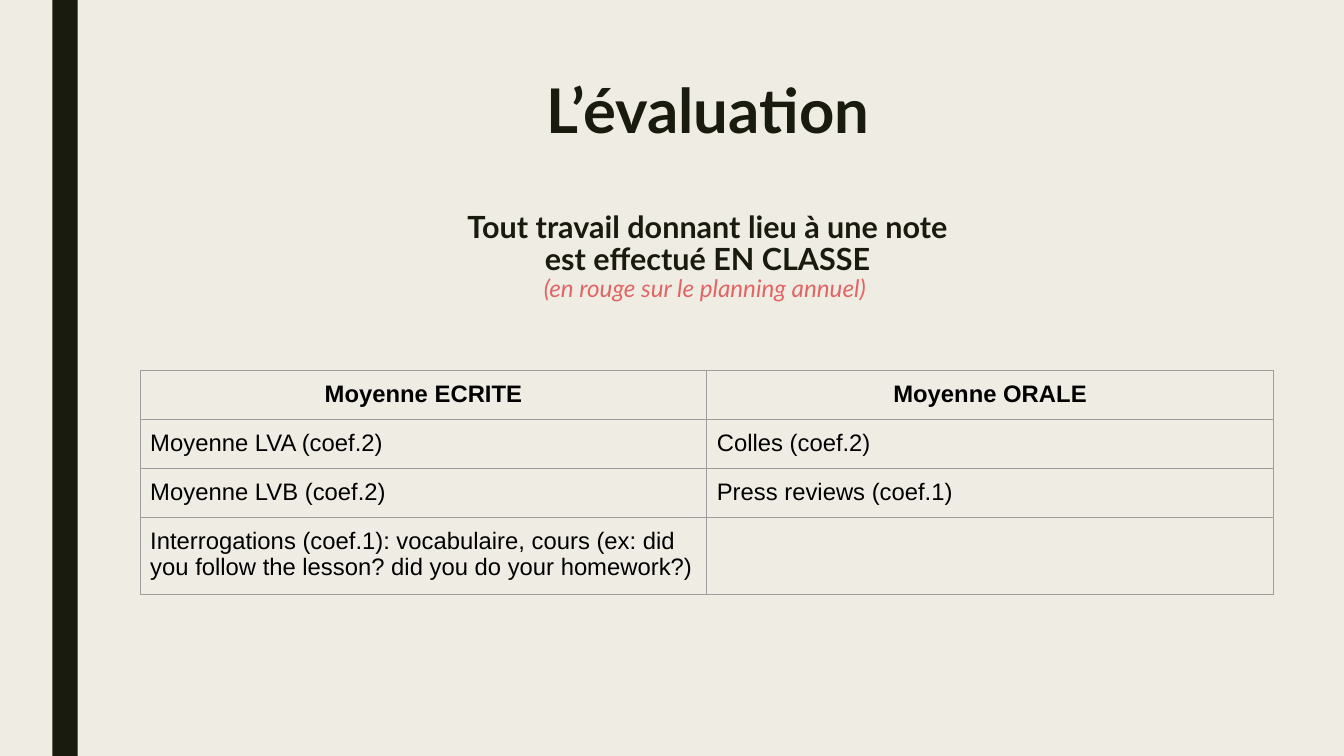
from lxml import etree
from pptx import Presentation
from pptx.dml.color import RGBColor
from pptx.enum.shapes import MSO_SHAPE
from pptx.enum.text import MSO_ANCHOR, PP_ALIGN
from pptx.oxml.ns import qn
from pptx.util import Inches, Pt

RECTANGLE = MSO_SHAPE.RECTANGLE
TOP = MSO_ANCHOR.TOP
LEFT, CENTER = PP_ALIGN.LEFT, PP_ALIGN.CENTER
COLORS = {"paper": "EFEDE3", "ink": "191B0E", "red": "E06666",
          "black": "000000", "grid": "9E9E9E"}


class EvaluationSlide:
    """Hold the style and the current page, with one method per kind of element."""

    heading_font = "Lato"
    table_font = "Arial"
    table_size = 17
    line_spacing = 0.89
    border_width = 0.75

    def __init__(self, deck):
        self.page = deck.slides.add_slide(deck.slide_layouts[6])
        self.paint(self.page.background.fill, "paper")

    def paint(self, fill, color):
        fill.solid()
        fill.fore_color.rgb = RGBColor.from_string(COLORS[color])

    def style(self, para, font, size, color, bold=False, italic=False, align=LEFT):
        para.alignment = align
        para.font.name = font
        para.font.size = Pt(size)
        para.font.bold = bold
        para.font.italic = italic
        para.font.color.rgb = RGBColor.from_string(COLORS[color])

    def bar(self, left, top, width, height):
        box = self.page.shapes.add_shape(
            RECTANGLE, Inches(left), Inches(top), Inches(width), Inches(height))
        box.shadow.inherit = False
        self.paint(box.fill, "ink")
        box.line.fill.background()

    def heading(self, left, top, width, height, lines):
        box = self.page.shapes.add_textbox(
            Inches(left), Inches(top), Inches(width), Inches(height))
        frame = box.text_frame
        frame.word_wrap = True
        frame.vertical_anchor = TOP
        for index, (text, size, color, bold, italic, gap) in enumerate(lines):
            para = frame.add_paragraph() if index else frame.paragraphs[0]
            para.text = text
            para.line_spacing = self.line_spacing
            para.space_before = Pt(gap)
            self.style(para, self.heading_font, size, color, bold, italic, CENTER)

    def border(self, cell):
        properties = cell._tc.get_or_add_tcPr()
        for side in ("a:lnL", "a:lnR", "a:lnT", "a:lnB"):
            line = etree.SubElement(properties, qn(side), w=str(Pt(self.border_width)))
            fill = etree.SubElement(line, qn("a:solidFill"))
            etree.SubElement(fill, qn("a:srgbClr"), val=COLORS["grid"])

    def table(self, left, top, column_width, row_heights, rows):
        columns = len(rows[0])
        grid = self.page.shapes.add_table(
            len(rows), columns, Inches(left), Inches(top),
            Inches(column_width * columns), Inches(sum(row_heights))).table
        for column in grid.columns:
            column.width = Inches(column_width)
        for row, height in zip(grid.rows, row_heights):
            row.height = Inches(height)
        for row_index, texts in enumerate(rows):
            header = row_index == 0
            for column_index, text in enumerate(texts):
                cell = grid.cell(row_index, column_index)
                cell.margin_left = cell.margin_right = Inches(0.1)
                cell.margin_top = cell.margin_bottom = Inches(0.1)
                self.border(cell)
                cell.fill.background()
                cell.text = text
                self.style(cell.text_frame.paragraphs[0], self.table_font, self.table_size,
                           "black", bold=header, align=CENTER if header else LEFT)


def main():
    deck = Presentation()
    deck.slide_width, deck.slide_height = Inches(13.33), Inches(7.5)
    slide = EvaluationSlide(deck)
    slide.bar(0.52, 0, 0.25, 7.5)
    slide.heading(1.77, 0.75, 10.5, 2.32, [
        ("L’évaluation", 44, "ink", True, False, 0),
        ("Tout travail donnant lieu à une note", 21.8, "ink", True, False, 47),
        ("est effectué EN CLASSE", 21.8, "ink", True, False, 0),
        ("(en rouge sur le planning annuel) ", 17.3, "red", False, True, 0),
    ])
    slide.table(1.39, 3.68, 5.62, [0.46, 0.46, 0.46, 0.73], [
        ("Moyenne ECRITE", "Moyenne ORALE"),
        ("Moyenne LVA (coef.2)", "Colles (coef.2)"),
        ("Moyenne LVB (coef.2)", "Press reviews (coef.1)"),
        ("Interrogations (coef.1): vocabulaire, cours (ex: did you follow the lesson? "
         "did you do your homework?)", ""),
    ])
    deck.save("out.pptx")


if __name__ == "__main__":
    main()
